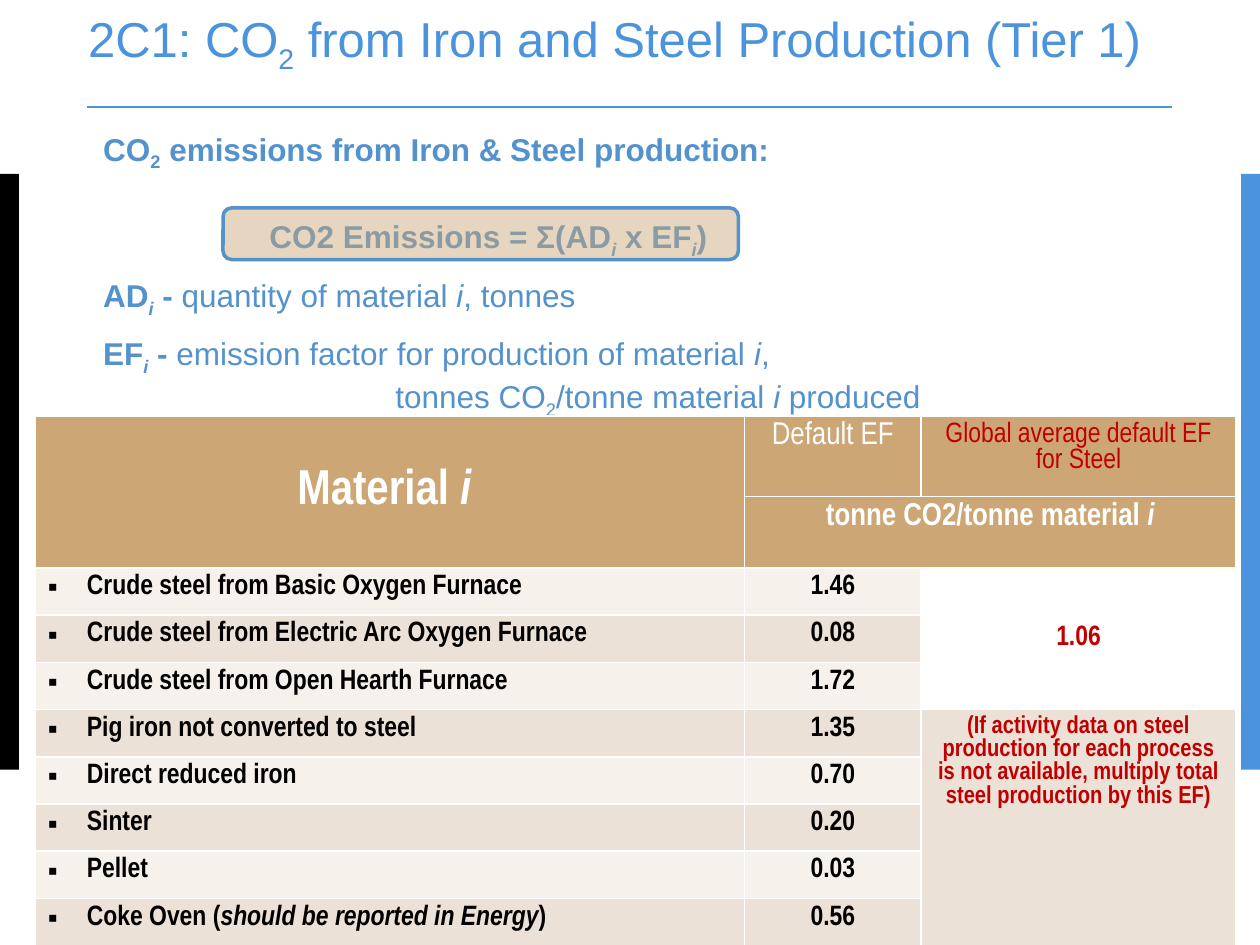
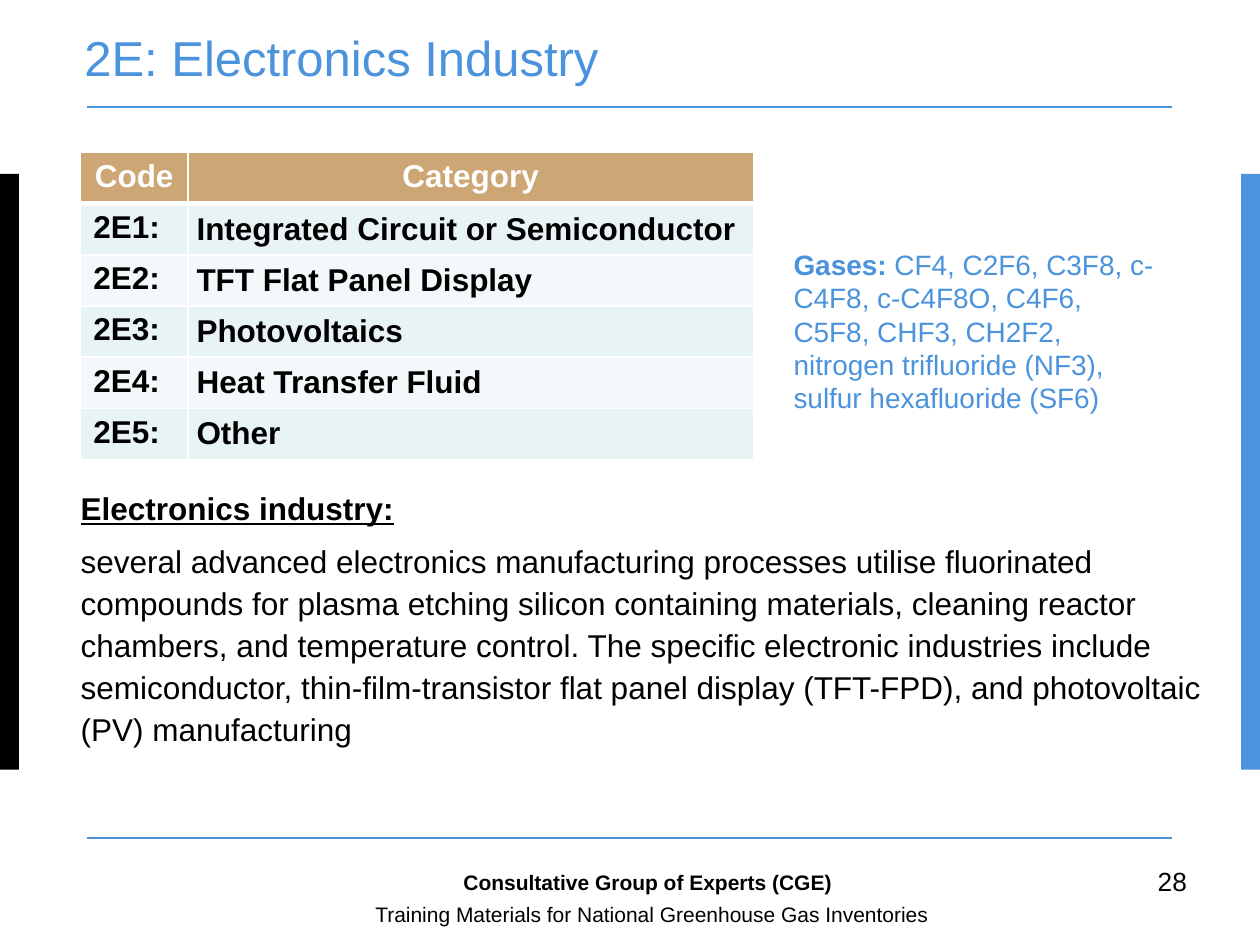
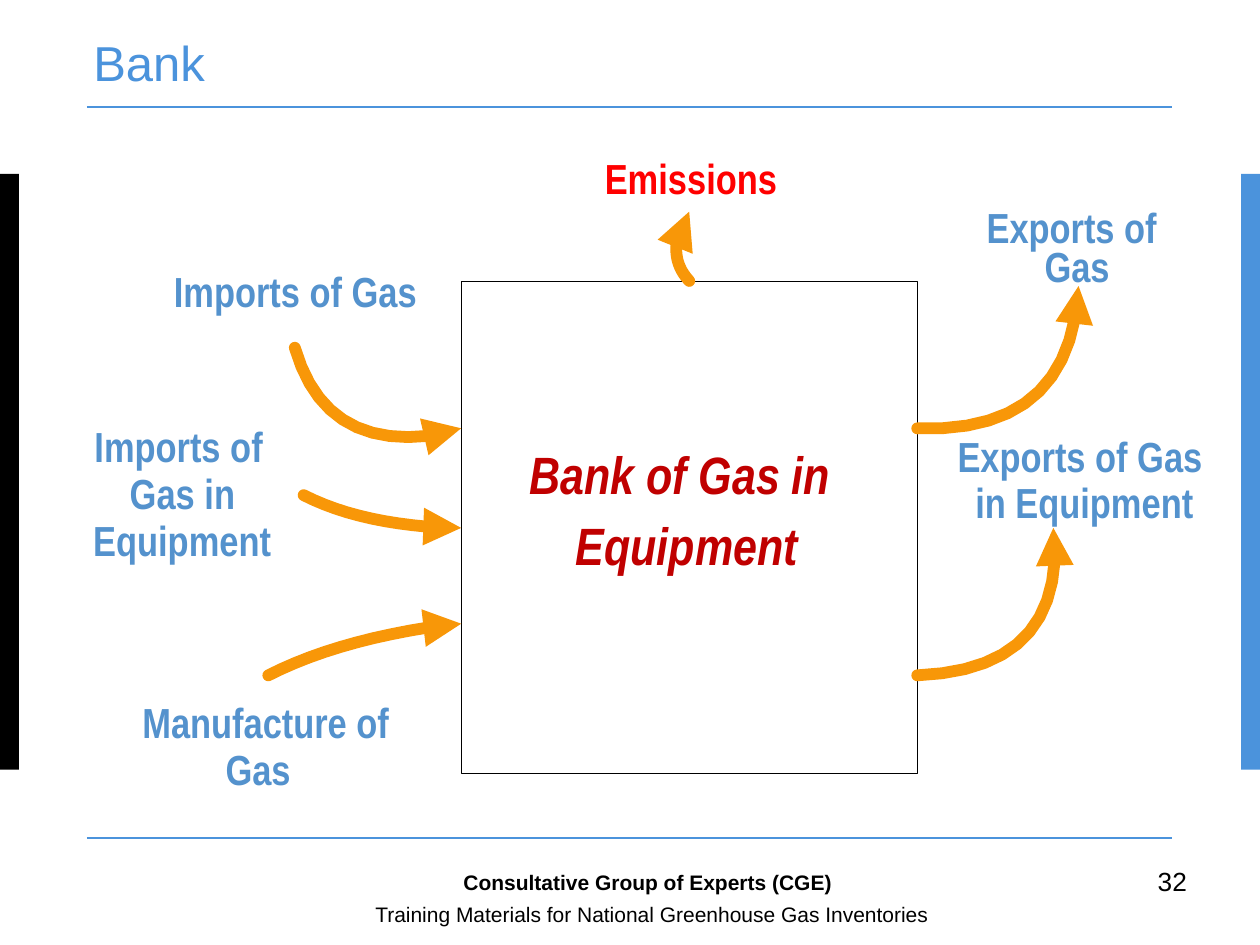
"""Build three slides on industrial greenhouse gas emissions."""
from dataclasses import dataclass
from math import dist

from lxml.etree import SubElement
from pptx import Presentation
from pptx.dml.color import RGBColor
from pptx.enum.shapes import MSO_CONNECTOR, MSO_SHAPE
from pptx.enum.text import MSO_ANCHOR, PP_ALIGN
from pptx.oxml.ns import qn
from pptx.util import Inches, Pt


@dataclass(frozen=True)
class Theme:
    sans: str = "Arial"
    narrow: str = "Arial Narrow"
    blue: RGBColor = RGBColor(0x4B, 0x93, 0xDC)
    text_blue: RGBColor = RGBColor(0x54, 0x92, 0xCD)
    tan: RGBColor = RGBColor(0xCC, 0xA6, 0x74)
    sand: tuple = (RGBColor(0xF6, 0xF1, 0xEB), RGBColor(0xEC, 0xE1, 0xD6))
    mint: tuple = (RGBColor(0xE7, 0xF3, 0xF4), RGBColor(0xF3, 0xF9, 0xFA))
    orange: RGBColor = RGBColor(0xF8, 0x97, 0x08)
    dark_red: RGBColor = RGBColor(0xC0, 0, 0)
    red: RGBColor = RGBColor(0xFF, 0, 0)
    black: RGBColor = RGBColor(0, 0, 0)
    white: RGBColor = RGBColor(0xFF, 0xFF, 0xFF)
    title: int = 28
    bank: int = 30
    flow: int = 24
    body: int = 18
    small: int = 16
    note: int = 14
    number: int = 15
    footer: int = 12


theme = Theme()


def write(frame, paragraphs, size, color, font=theme.sans, align=PP_ALIGN.LEFT,
          spacing=None, gaps=(), indents=(), inset=None):
    """Write paragraphs of (text, flags) runs; flags are b, i, u and s for subscript."""
    frame.word_wrap = True
    if inset is not None:
        frame.margin_left = frame.margin_right = Inches(inset)
        frame.margin_top = frame.margin_bottom = Inches(inset)
    for index, runs in enumerate(paragraphs):
        paragraph = frame.paragraphs[0] if index == 0 else frame.add_paragraph()
        paragraph.alignment = align
        if spacing:
            paragraph.line_spacing = spacing
        if gaps and gaps[index]:
            paragraph.space_before = Pt(gaps[index])
        if indents:
            paragraph._p.get_or_add_pPr().set("marL", str(Inches(indents[index])))
        for text, flags in runs:
            run = paragraph.add_run()
            run.text = text
            run.font.name = font
            run.font.size = Pt(size)
            run.font.color.rgb = color
            run.font.bold = "b" in flags
            run.font.italic = "i" in flags
            run.font.underline = "u" in flags
            if "s" in flags:
                run._r.get_or_add_rPr().set("baseline", "-25000")


def paint(target, fill, line=None, line_width=1, borders=None):
    """Fill and outline a shape, or fill a cell and give it white borders."""
    if borders:
        properties = target._tc.get_or_add_tcPr()
        for side, width in zip("LRTB", borders):
            border = SubElement(properties, qn(f"a:ln{side}"), w=str(Pt(width)))
            SubElement(SubElement(border, qn("a:solidFill")), qn("a:srgbClr"),
                       val=str(theme.white))
    else:
        target.shadow.inherit = False
        if line is None:
            target.line.fill.background()
        else:
            target.line.color.rgb = line
            target.line.width = Pt(line_width)
    if fill is None:
        target.fill.background()
    else:
        target.fill.solid()
        target.fill.fore_color.rgb = fill


presentation = Presentation()
presentation.slide_width, presentation.slide_height = Inches(10), Inches(7.5)

titles = [
    ((0.7, 0, 9.3, 0.99), [("2C1: CO", ""), ("2", "s"),
                           (" from Iron and Steel Production (Tier 1)", "")], None),
    ((0.67, 0.16, 8.66, 0.84), [("2E: Electronics Industry", "")], "28"),
    ((0.74, 0.45, 8.61, 0.34), [("Bank", "")], "32"),
]
slides = []
for title_box, title_runs, page_number in titles:
    slide = presentation.slides.add_slide(presentation.slide_layouts[6])
    slides.append(slide)
    for left, color in ((0, theme.black), (9.85, theme.blue)):
        band = slide.shapes.add_shape(MSO_SHAPE.RECTANGLE, Inches(left), Inches(1.38),
                                      Inches(0.15), Inches(4.73))
        paint(band, color)
    for height in (0.85, 6.65) if page_number else (0.85,):
        rule = slide.shapes.add_connector(MSO_CONNECTOR.STRAIGHT, Inches(0.69), Inches(height),
                                          Inches(9.3), Inches(height))
        rule.line.color.rgb = theme.blue
        rule.line.width = Pt(1)
        SubElement(rule._element.spPr, qn("a:effectLst"))
    title = slide.shapes.add_textbox(*map(Inches, title_box)).text_frame
    title.vertical_anchor = MSO_ANCHOR.MIDDLE
    write(title, [title_runs], theme.title, theme.blue, spacing=Pt(15), inset=0)
    if page_number:
        for box, text, flags, size in (
            ((9.09, 6.82, 0.6, 0.35), page_number, "", theme.number),
            ((2.88, 7.11, 5.72, 0.2),
             "Training Materials for National Greenhouse Gas Inventories", "", theme.footer),
            ((3.58, 6.85, 3.39, 0.27), "Consultative Group of Experts (CGE)", "b", theme.footer),
        ):
            footer = slide.shapes.add_textbox(*map(Inches, box)).text_frame
            write(footer, [[(text, flags)]], size, theme.black)

steel, electronics, bank = slides

method = steel.shapes.add_textbox(Inches(0.72), Inches(0.98), Inches(8), Inches(2.32))
write(method.text_frame, [
    [("CO", "b"), ("2", "bs"), (" emissions from Iron & Steel production:", "b")],
    [("CO2 Emissions = Σ(AD", "b"), ("i", "bis"), (" x EF", "b"), ("i", "bis"), (")", "b")],
    [("AD", "b"), ("i", "bis"), (" - ", "b"), ("quantity of material ", ""), ("i", "i"),
     (", tonnes", "")],
    [("EF", "b"), ("i", "bis"), (" - ", "b"), ("emission factor for production of material ", ""),
     ("i", "i"), (",", "")],
    [("tonnes CO", ""), ("2", "s"), ("/tonne material ", ""), ("i", "i"), (" produced", "")],
], theme.body, theme.text_blue, spacing=Pt(24.5), gaps=(0, 25.5, 9, 9, 0),
    indents=(0, 1.32, 0, 0, 2.32))

formula_frame = steel.shapes.add_shape(MSO_SHAPE.ROUNDED_RECTANGLE, Inches(1.77), Inches(1.65),
                                       Inches(4.09), Inches(0.41))
paint(formula_frame, theme.tan, line=theme.text_blue, line_width=2)
tint = formula_frame._element.spPr.find(qn("a:solidFill")).find(qn("a:srgbClr"))
SubElement(tint, qn("a:alpha"), val="46000")

materials = [
    ([("Crude steel from Basic Oxygen Furnace", "b")], "1.46"),
    ([("Crude steel from Electric Arc Oxygen Furnace", "b")], "0.08"),
    ([("Crude steel from Open Hearth Furnace", "b")], "1.72"),
    ([("Pig iron not converted to steel", "b")], "1.35"),
    ([("Direct reduced iron", "b")], "0.70"),
    ([("Sinter", "b")], "0.20"),
    ([("Pellet", "b")], "0.03"),
    ([("Coke Oven (", "b"), ("should be reported in Energy", "bi"), (")", "b")], "0.56"),
]
header_rows, crude_steel_rows = 2, 3
note_row = header_rows + crude_steel_rows
row_count = header_rows + len(materials)
name_column, factor_column, average_column = range(3)
factors = steel.shapes.add_table(row_count, 3, Inches(0.28), Inches(3.3), Inches(9.53),
                                 Inches(4.09)).table
factors.first_row = factors.horz_banding = False
for column, width in zip(factors.columns, (5.63, 1.4, 2.5)):
    column.width = Inches(width)
for row, height in zip(factors.rows, [0.64, 0.45] + [3 / 8] * len(materials)):
    row.height = Inches(height)
for row_index in range(row_count):
    for column_index in (name_column, factor_column, average_column):
        if row_index < header_rows:
            fill = theme.tan
        elif column_index == average_column:
            fill = None if row_index < note_row else theme.sand[1]
        else:
            fill = theme.sand[row_index % 2]
        paint(factors.cell(row_index, column_index), fill, borders=(1, 1, 1, 1))
for first, last in (
    ((0, name_column), (1, name_column)),
    ((1, factor_column), (1, average_column)),
    ((header_rows, average_column), (note_row - 1, average_column)),
    ((note_row, average_column), (row_count - 1, average_column)),
):
    factors.cell(*first).merge(factors.cell(*last))
note = ("(If activity data on steel production for each process is not available, "
        "multiply total steel production by this EF)")
centred_cells = [
    (0, name_column, [("Material ", "b"), ("i ", "bi")], theme.title, theme.white),
    (0, factor_column, [("Default EF", "")], theme.body, theme.white),
    (0, average_column, [("Global average default EF for Steel", "")], theme.small,
     theme.dark_red),
    (1, factor_column, [("tonne CO2/tonne material ", "b"), ("i", "bi")], theme.body,
     theme.white),
    (header_rows, average_column, [("1.06", "b")], theme.small, theme.dark_red),
    (note_row, average_column, [(note, "b")], theme.note, theme.dark_red),
]
for row_index, (name_runs, factor) in enumerate(materials, start=header_rows):
    centred_cells.append((row_index, factor_column, [(factor, "b")], theme.small, theme.black))
    name_frame = factors.cell(row_index, name_column).text_frame
    write(name_frame, [name_runs], theme.small, theme.black, theme.narrow, indents=[0.31])
    properties = name_frame.paragraphs[0]._p.get_or_add_pPr()
    properties.set("indent", str(-Inches(0.31)))
    SubElement(properties, qn("a:buFont"), typeface=theme.sans)
    SubElement(properties, qn("a:buChar"), char="▪")
for row_index, column_index, runs, size, color in centred_cells:
    write(factors.cell(row_index, column_index).text_frame, [runs], size, color, theme.narrow,
          PP_ALIGN.CENTER)
for position in ((0, name_column), (header_rows, average_column)):
    factors.cell(*position).vertical_anchor = MSO_ANCHOR.MIDDLE

description = electronics.shapes.add_textbox(Inches(0.64), Inches(3.85), Inches(8.92), Inches(2.56))
write(description.text_frame, [
    [("Electronics industry:", "bu")],
    [("several advanced electronics manufacturing processes utilise fluorinated compounds for "
      "plasma etching silicon containing materials, cleaning reactor chambers, and temperature "
      "control. The specific electronic industries include semiconductor, thin-film-transistor "
      "flat panel display (TFT-FPD), and photovoltaic (PV) manufacturing", "")],
], theme.body, theme.black, spacing=Pt(24), gaps=(0, 6), inset=0)

category_names = ["Integrated Circuit or Semiconductor", "TFT Flat Panel Display",
                  "Photovoltaics", "Heat Transfer Fluid", "Other"]
categories = [("Code", "Category")]
categories += [(f"2E{number}:", name) for number, name in enumerate(category_names, start=1)]
category_table = electronics.shapes.add_table(len(categories), 2, Inches(0.64), Inches(1.21),
                                              Inches(5.34), Inches(2.44)).table
category_table.first_row = category_table.horz_banding = False
for column, width in zip(category_table.columns, (0.85, 4.49)):
    column.width = Inches(width)
for row_index, texts in enumerate(categories):
    category_table.rows[row_index].height = Inches(2.44 / len(categories))
    is_header = row_index == 0
    fill = theme.tan if is_header else theme.mint[(row_index - 1) % 2]
    color = theme.white if is_header else theme.black
    align = PP_ALIGN.CENTER if is_header else PP_ALIGN.LEFT
    borders = (1, 1, 3 if row_index == 1 else 1, 3 if is_header else 1)
    for column_index, text in enumerate(texts):
        cell = category_table.cell(row_index, column_index)
        paint(cell, fill, borders=borders)
        write(cell.text_frame, [[(text, "b")]], theme.body, color, align=align)
        if column_index == 1 and not is_header:
            cell.vertical_anchor = MSO_ANCHOR.MIDDLE
            cell.margin_left = cell.margin_right = Inches(0.07)
            cell.margin_top = cell.margin_bottom = 0

gases = electronics.shapes.add_textbox(Inches(6.2), Inches(1.92), Inches(3.13), Inches(1.67))
write(gases.text_frame, [[
    ("Gases: ", "b"),
    ("CF4, C2F6, C3F8, c-C4F8, c-C4F8O, C4F6, C5F8, CHF3, CH2F2, nitrogen trifluoride (NF3), "
     "sulfur hexafluoride (SF6)", ""),
]], theme.small, theme.blue, spacing=Pt(19))

bank_left, bank_top, bank_width, bank_height = 3.66, 2.23, 3.62, 3.91
bank_right = bank_left + bank_width
bank_box = bank.shapes.add_shape(MSO_SHAPE.RECTANGLE, Inches(bank_left), Inches(bank_top),
                                 Inches(bank_width), Inches(bank_height))
paint(bank_box, theme.white, line=theme.black, line_width=0.38)

curve_steps, head_length, head_half_width = 10, 0.3, 0.15
flow_arrows = {
    "imports of gas": ((2.34, 2.76), (2.57, 3.55), (3.4, 3.46), (bank_left, 3.4)),
    "imports in equipment": ((2.41, 3.93), (2.8, 4.13), (3.39, 4.18), (bank_left, 4.19)),
    "manufacture": ((2.13, 5.36), (2.64, 5.1), (3.4, 4.98), (bank_left, 4.95)),
    "exports of gas": ((bank_right, 3.4), (8.36, 3.44), (8.53, 2.53), (8.56, 2.27)),
    "exports in equipment": ((bank_right, 5.36), (8.32, 5.32), (8.37, 4.45), (8.36, 4.19)),
    "emissions": ((5.47, bank_top), (5.35, 2.1), (5.37, 1.93), (5.47, 1.68)),
}
for start, control, neck, tip in flow_arrows.values():
    shaft_points = []
    for step in range(curve_steps + 1):
        t = step / curve_steps
        shaft_points.append([(1 - t) ** 2 * a + 2 * t * (1 - t) * b + t ** 2 * c
                             for a, b, c in zip(start, control, neck)])
    along_x, along_y = [(end - begin) / dist(neck, tip) for begin, end in zip(neck, tip)]
    base_x, base_y = tip[0] - head_length * along_x, tip[1] - head_length * along_y
    head_points = [tip] + [(base_x - side * along_y, base_y + side * along_x)
                           for side in (head_half_width, -head_half_width)]
    for points, is_head in ((shaft_points, False), (head_points, True)):
        first, *others = [(Inches(x), Inches(y)) for x, y in points]
        builder = bank.shapes.build_freeform(*first)
        builder.add_line_segments(others, close=is_head)
        shape = builder.convert_to_shape()
        if is_head:
            paint(shape, theme.orange)
        else:
            paint(shape, None, line=theme.orange, line_width=6.75)
            shape._element.spPr.find(qn("a:ln")).set("cap", "rnd")

flow_style = ("b", theme.flow, theme.text_blue)
emission_style = ("b", theme.flow, theme.red)
bank_style = ("bi", theme.bank, theme.dark_red)
labels = [
    (flow_style, 2.11, 0, [(1.38, 2.04, "Imports of Gas")]),
    (flow_style, 3.34, 0.37, [(0.75, 1.44, "Imports of"), (1.03, 0.93, "Gas in"),
                              (0.74, 1.46, "Equipment")]),
    (flow_style, 5.53, 0.37, [(1.13, 2.07, "Manufacture of"), (1.79, 0.6, "Gas")]),
    (flow_style, 1.6, 0.31, [(7.83, 1.45, "Exports of"), (8.29, 0.6, "Gas")]),
    (flow_style, 3.42, 0.36, [(7.6, 2.06, "Exports of Gas"), (7.74, 1.85, "in Equipment")]),
    (emission_style, 1.21, 0, [(4.8, 1.45, "Emissions")]),
    (bank_style, 3.51, 0.56, [(4.2, 2.6, "Bank of Gas in"), (4.57, 1.9, "Equipment")]),
]
for (flags, size, color), top, pitch, lines in labels:
    for line_index, (left, width, text) in enumerate(lines):
        label = bank.shapes.add_textbox(Inches(left), Inches(top + line_index * pitch),
                                        Inches(width), Inches(size / 60))
        write(label.text_frame, [[(text, flags)]], size, color, theme.narrow, inset=0)

presentation.save("out.pptx")
